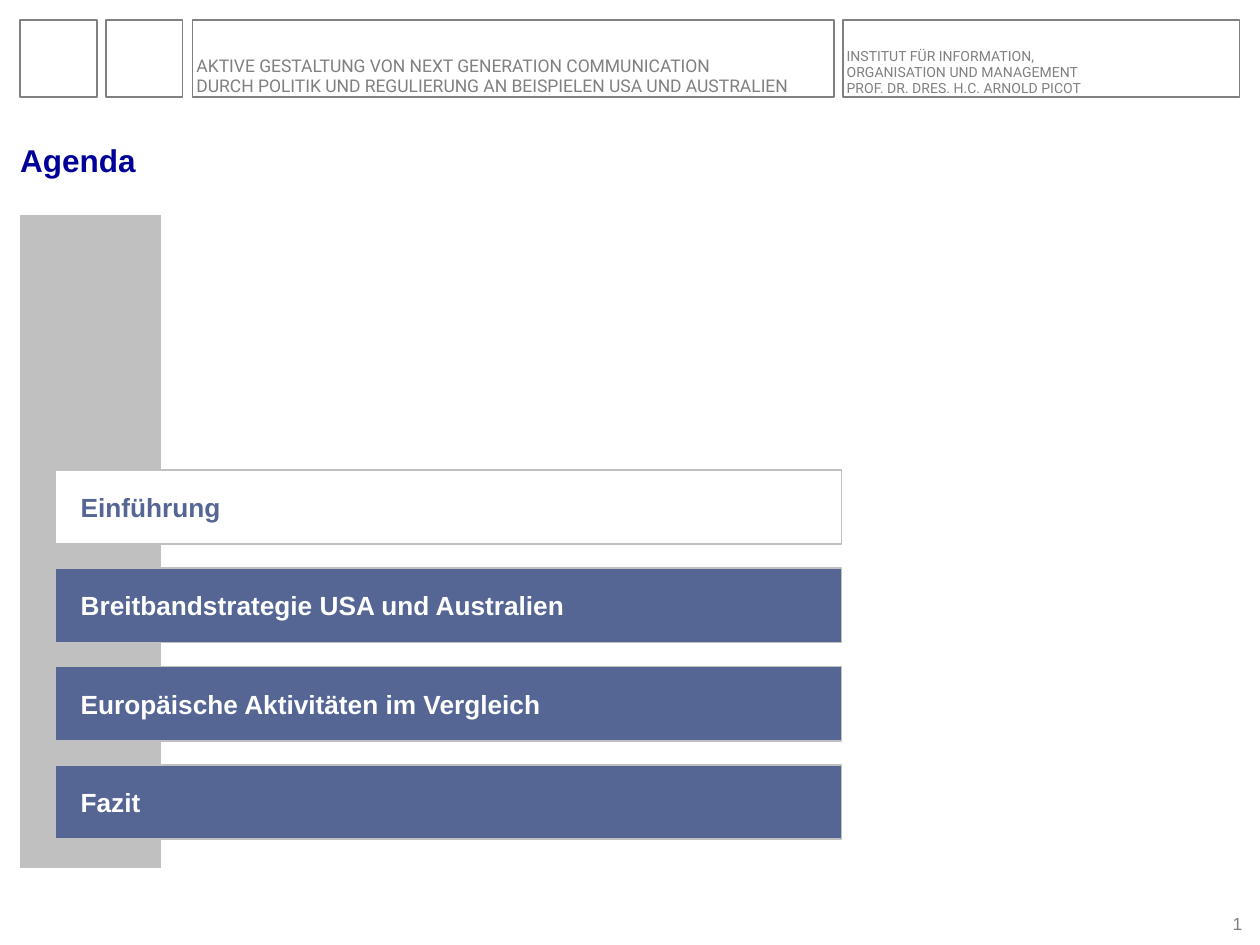
from pptx import Presentation
from pptx.dml.color import RGBColor
from pptx.enum import shapes, text
from pptx.util import Inches, Pt

GREY, SILVER, WHITE = "808080", "C0C0C0", "FFFFFF"
BLUE, NAVY = "556594", "000099"

TITLE = "Agenda"
TOPICS = ["Einführung", "Breitbandstrategie USA und Australien",
          "Europäische Aktivitäten im Vergleich", "Fazit"]
CURRENT = 0
FRAMES = [(0.16, 0.61), (0.84, 0.61), (1.53, 5.09), (6.69, 3.15)]  # left, width
HEADS = [
    ((1.56, 0.36, 5.06, 0.41), 10,
     "AKTIVE GESTALTUNG VON NEXT GENERATION COMMUNICATION\v"
     "DURCH POLITIK UND REGULIERUNG AN BEISPIELEN USA UND AUSTRALIEN"),
    ((6.72, 0.31, 2.6, 0.46), 8,
     "INSTITUT FÜR INFORMATION,\vORGANISATION UND MANAGEMENT\v"
     "PROF. DR. DRES. H.C. ARNOLD PICOT"),
]
BAR_TOP, BAR_STEP = 3.73, 0.78


def color(code):
    return RGBColor.from_string(code)


def write(shape, words, size, ink, font="Arial", bold=False,
          anchor=text.MSO_ANCHOR.BOTTOM, align=text.PP_ALIGN.LEFT, inset=0):
    """Fill a shape with one paragraph and return that paragraph."""
    frame = shape.text_frame
    frame.auto_size = text.MSO_AUTO_SIZE.NONE
    frame.word_wrap = True
    frame.vertical_anchor = anchor
    frame.margin_left = Inches(inset)
    frame.margin_right = frame.margin_top = frame.margin_bottom = 0
    par = frame.paragraphs[0]
    par.text = words
    par.alignment = align
    par.font.name, par.font.size, par.font.bold = font, Pt(size), bold
    par.font.color.rgb = color(ink)
    return par


def add_box(slide, place, line, width, fill=None):
    box = slide.shapes.add_shape(shapes.MSO_SHAPE.RECTANGLE, *map(Inches, place))
    box.shadow.inherit = False
    if fill:
        box.fill.solid()
        box.fill.fore_color.rgb = color(fill)
    else:
        box.fill.background()
    box.line.color.rgb = color(line)
    box.line.width = Pt(width)
    return box


def add_text(slide, place, *args, **style):
    return write(slide.shapes.add_textbox(*map(Inches, place)), *args, **style)


def main():
    deck = Presentation()
    deck.slide_width, deck.slide_height = Inches(10), Inches(7.5)
    slide = deck.slides.add_slide(deck.slide_layouts[5])

    title = slide.shapes.title
    title.left, title.top, title.width, title.height = map(
        Inches, (0.16, 0.84, 9.68, 0.58))
    write(title, TITLE, 18, NAVY, bold=True)

    for left, width in FRAMES:
        add_box(slide, (left, 0.16, width, 0.61), GREY, 0.75)
    for place, size, words in HEADS:
        add_text(slide, place, words, size, GREY, font="Roboto").line_spacing = 0.95
    add_text(slide, (9.58, 7.24, 0.28, 0.17), "1", 10, GREY,
             align=text.PP_ALIGN.RIGHT)

    add_box(slide, (0.15, 1.7, 1.14, 5.2), WHITE, 1.5, SILVER)
    for i, topic in enumerate(TOPICS):
        fill, ink = (WHITE, BLUE) if i == CURRENT else (BLUE, WHITE)
        bar = add_box(slide, (0.44, BAR_TOP + i * BAR_STEP, 6.24, 0.59),
                      SILVER, 1, fill)
        write(bar, topic, 15, ink, bold=True,
              anchor=text.MSO_ANCHOR.MIDDLE, inset=0.2)

    deck.save("out.pptx")


if __name__ == "__main__":
    main()
